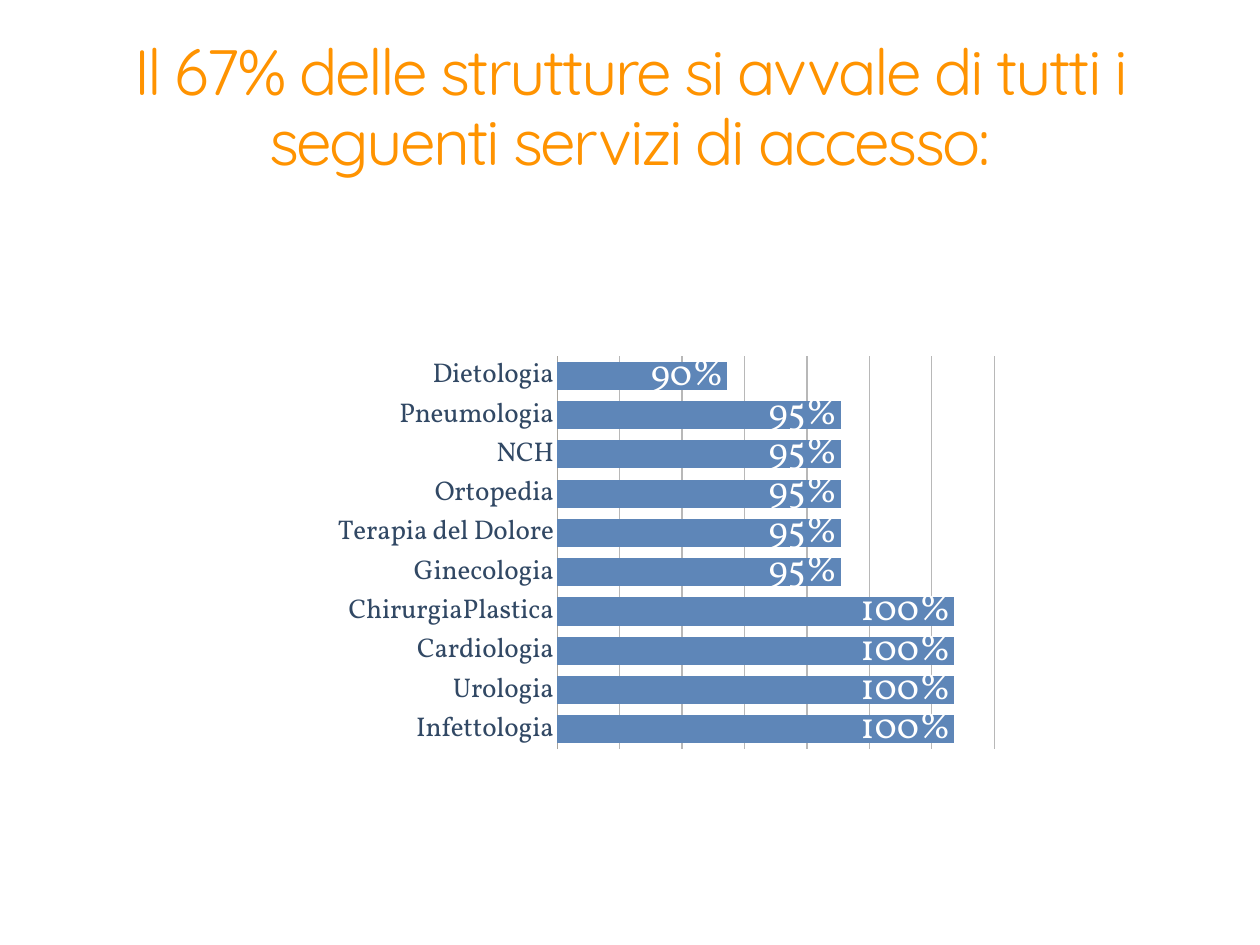
from lxml.etree import SubElement
from pptx import Presentation
from pptx.chart.data import CategoryChartData
from pptx.dml.color import RGBColor
from pptx.enum.chart import (XL_CHART_TYPE, XL_LABEL_POSITION, XL_TICK_LABEL_POSITION,
                             XL_TICK_MARK)
from pptx.enum.text import MSO_ANCHOR, PP_ALIGN
from pptx.oxml.ns import qn
from pptx.util import Inches, Pt

# Content
TITLE = "Il 67% delle strutture si avvale di tutti i seguenti servizi di accesso:"
RATES = {
    "Dietologia": 0.9,
    "Pneumologia": 0.95,
    "NCH": 0.95,
    "Ortopedia": 0.95,
    "Terapia del Dolore": 0.95,
    "Ginecologia": 0.95,
    "ChirurgiaPlastica": 1,
    "Cardiologia": 1,
    "Urologia": 1,
    "Infettologia": 1,
}

# Format
PERCENT = "#,##0%"
LOW, STEP, COUNT = 0.825, 0.0275, 7
FRAME = {"x": 0.357, "y": 0.08, "w": 0.638, "h": 0.88}
FONTS = {
    "title": {"name": "Quicksand", "size": Pt(52), "color": "FF9300"},
    "chart": {"name": "Noto Sans", "size": Pt(10), "color": "324863"},
    "axis": {"name": "Vollkorn", "size": Pt(22), "color": "314864"},
    "label": {"name": "Vollkorn", "size": Pt(30), "color": "FFFFFF"},
}


def tint(part, code):
    part.rgb = RGBColor.from_string(code)


def assign(part, values):
    for key, value in values.items():
        setattr(part, key, value)


def style(font, kind):
    for key, value in FONTS[kind].items():
        if key == "color":
            tint(font.color, value)
        else:
            setattr(font, key, value)


def stroke(line, code):
    line.width = Pt(1)
    tint(line.color, code)


def add_title(slide):
    box = slide.shapes.add_textbox(*map(Inches, (0.39, 0.12, 13.44, 2.24)))
    frame = box.text_frame
    assign(frame, {"word_wrap": True, "vertical_anchor": MSO_ANCHOR.MIDDLE})
    sides = ("left", "right", "top", "bottom")
    assign(frame, {f"margin_{side}": Inches(0.06) for side in sides})
    para = frame.paragraphs[0]
    assign(para, {"alignment": PP_ALIGN.CENTER, "line_spacing": 0.9})
    run = para.add_run()
    run.text = TITLE
    style(run.font, "title")
    run.font._element.set("spc", "-200")


def place_plot(chart):
    area = chart._chartSpace.find(".//" + qn("c:plotArea"))
    for old in area.findall(qn("c:layout")):
        area.remove(old)
    layout = SubElement(area, qn("c:layout"))
    area.insert(0, layout)
    manual = SubElement(layout, qn("c:manualLayout"))
    rules = {"layoutTarget": "inner", "xMode": "edge", "yMode": "edge", **FRAME}
    for key, value in rules.items():
        SubElement(manual, qn("c:" + key)).set("val", str(value))


def add_bars(slide):
    data = CategoryChartData(number_format=PERCENT)
    data.categories = list(RATES)
    data.add_series("Series 1", list(RATES.values()))
    spot = map(Inches, (3.53, 3.62, 7.73, 5.04))
    chart = slide.shapes.add_chart(XL_CHART_TYPE.BAR_CLUSTERED, *spot, data).chart
    assign(chart, {"has_legend": False, "has_title": False})
    style(chart.font, "chart")
    place_plot(chart)

    # Axes
    cats, vals = chart.category_axis, chart.value_axis
    for axis in (cats, vals):
        assign(axis, {"major_tick_mark": XL_TICK_MARK.NONE,
                      "minor_tick_mark": XL_TICK_MARK.NONE})
        style(axis.tick_labels.font, "axis")
    assign(cats, {"reverse_order": True, "has_major_gridlines": False})
    stroke(cats.format.line, "A8A49D")
    assign(vals, {"minimum_scale": LOW, "maximum_scale": LOW + COUNT * STEP,
                  "major_unit": STEP, "has_major_gridlines": True,
                  "tick_label_position": XL_TICK_LABEL_POSITION.NONE})
    assign(vals.tick_labels, {"number_format": PERCENT, "number_format_is_linked": False})
    vals.format.line.fill.background()
    stroke(vals.major_gridlines.format.line, "B8B8B8")

    # Bars and labels
    plot = chart.plots[0]
    assign(plot, {"gap_width": 40, "overlap": -10, "vary_by_categories": False})
    bars = plot.series[0]
    bars.format.fill.solid()
    tint(bars.format.fill.fore_color, "5E86B8")
    labels = bars.data_labels
    assign(labels, {"show_value": True, "position": XL_LABEL_POSITION.INSIDE_END,
                    "number_format": PERCENT, "number_format_is_linked": False})
    style(labels.font, "label")


def main():
    deck = Presentation()
    assign(deck, {"slide_width": Inches(14.22), "slide_height": Inches(10.67)})
    slide = deck.slides.add_slide(deck.slide_layouts[6])
    add_title(slide)
    add_bars(slide)
    deck.save("out.pptx")


if __name__ == "__main__":
    main()
